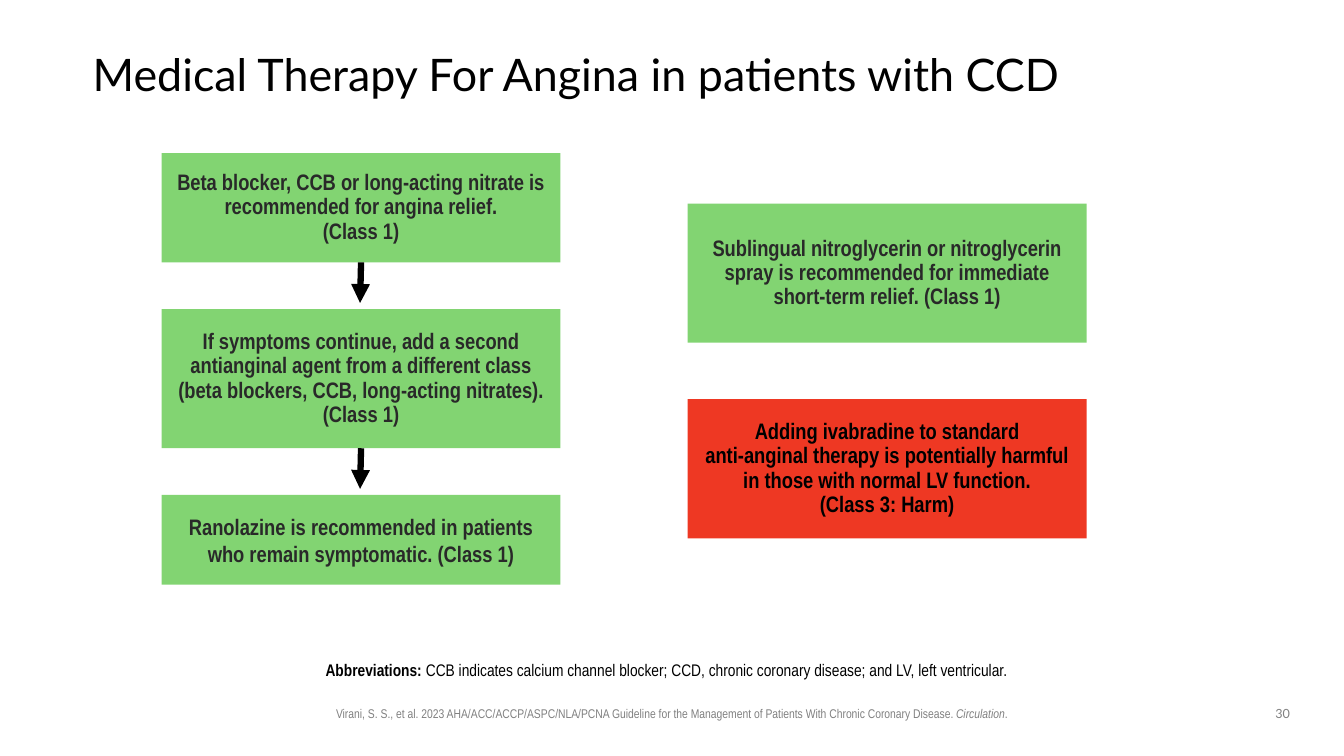
from lxml import etree
from pptx import Presentation
from pptx.dml.color import RGBColor
from pptx.enum.shapes import MSO_CONNECTOR as Connector, MSO_SHAPE as Shape
from pptx.enum.text import MSO_ANCHOR as Anchor, MSO_AUTO_SIZE as AutoSize, PP_ALIGN as Align
from pptx.oxml.ns import qn
from pptx.util import Pt

GREEN = RGBColor(0x82, 0xD4, 0x72)
RED = RGBColor(0xEE, 0x38, 0x23)
CHARCOAL = RGBColor(0x29, 0x29, 0x29)
GRAY = RGBColor(0x80, 0x80, 0x80)
BLACK = RGBColor(0, 0, 0)
NARROW, LATO = "Arial Narrow", "Lato"

TITLE = "Medical Therapy For Angina in patients with CCD"
# text, height, line spacing
STEPS = [
    ("Beta blocker, CCB or long-acting nitrate is recommended for angina relief.\v(Class 1)", 78, 0.9),
    ("If symptoms continue, add a second antianginal agent from a different class "
     "(beta blockers, CCB, long-acting nitrates). (Class 1)", 99.4, 0.9),
    ("Ranolazine is recommended in patients who remain symptomatic. (Class 1)", 64, 1.0),
]
# text, fill, font colour
ADVICE = [
    ("Sublingual nitroglycerin or nitroglycerin spray is recommended for immediate\v"
     "short-term relief. (Class 1)", GREEN, CHARCOAL),
    ("Adding ivabradine to standard\vanti-anginal therapy is potentially harmful "
     "in those with normal LV function.\v(Class 3: Harm)", RED, BLACK),
]
# text, bold, italic
ABBREVIATIONS = [
    ("Abbreviations: ", True, False),
    ("CCB indicates calcium channel blocker; CCD, chronic coronary disease; "
     "and LV, left ventricular.", False, False),
]
CITATION = [
    ("Virani, S. S., et al. 2023 AHA/ACC/ACCP/ASPC/NLA/PCNA Guideline for the Management "
     "of Patients With Chronic Coronary Disease. ", False, False),
    ("Circulation", False, True),
    (".", False, False),
]
PAGE_NUMBER = [("30", False, False)]

BOX_WIDTH = 285
STEP_LEFT, STEP_TOP, STEP_GAP = 115.4, 109.4, 33.4
ADVICE_LEFT, ADVICE_TOP, ADVICE_HEIGHT, ADVICE_PITCH = 491.2, 145.4, 99.4, 139.7
ARROW_LENGTH = 29


def place(shape, left, top, width, height):
    shape.left, shape.top, shape.width, shape.height = map(Pt, (left, top, width, height))


def style(font, name, size, color, bold=False, italic=False):
    font.name, font.size, font.bold, font.italic = name, Pt(size), bold, italic
    font.color.rgb = color


def add_box(page, text, left, top, height, fill, color, spacing=0.9):
    box = page.shapes.add_shape(Shape.RECTANGLE, Pt(left), Pt(top), Pt(BOX_WIDTH), Pt(height))
    box.shadow.inherit = False
    box.fill.solid()
    box.fill.fore_color.rgb = fill
    box.line.fill.background()
    frame = box.text_frame
    frame.word_wrap = True
    frame.vertical_anchor = Anchor.MIDDLE
    frame.text = text
    para = frame.paragraphs[0]
    para.alignment, para.line_spacing = Align.CENTER, spacing
    for span in para.runs:
        style(span.font, NARROW, 16, color, bold=True)
    return box


def add_arrow_below(page, box):
    middle, bottom = box.left + box.width // 2, box.top + box.height
    arrow = page.shapes.add_connector(Connector.STRAIGHT, middle, bottom,
                                      middle - Pt(0.7), bottom + Pt(ARROW_LENGTH))
    arrow.begin_connect(box, 2)
    arrow.line.color.rgb = BLACK
    arrow.line.width = Pt(4.5)
    etree.SubElement(arrow.line._get_or_add_ln(), qn("a:tailEnd"), type="triangle")
    etree.SubElement(arrow._element.spPr, qn("a:effectLst"))


def write_spans(frame, spans, name, size, color):
    frame.word_wrap = True
    para = frame.paragraphs[0]
    para.alignment = Align.CENTER
    for text, bold, italic in spans:
        span = para.add_run()
        span.text = text
        style(span.font, name, size, color, bold, italic)
    return para


def add_footer(page, spans, name, left, width):
    footer = page.shapes.add_textbox(Pt(left), Pt(500.4), Pt(width), Pt(18.2))
    write_spans(footer.text_frame, spans, name, 9, GRAY)


def set_title(title):
    place(title, 66.2, 28.8, 828, 51.8)
    frame = title.text_frame
    frame.text = TITLE
    frame.auto_size, frame.vertical_anchor = AutoSize.NONE, Anchor.MIDDLE
    frame.margin_left = frame.margin_right = frame.margin_top = frame.margin_bottom = 0
    para = frame.paragraphs[0]
    para.alignment, para.line_spacing = Align.LEFT, 0.9
    style(para.runs[0].font, LATO, 32, BLACK)


def set_abbreviations(body):
    place(body, 170.6, 469.4, 618.5, 16.6)
    frame = body.text_frame
    frame.auto_size, frame.vertical_anchor = AutoSize.NONE, Anchor.TOP
    frame.margin_left = 0
    para = write_spans(frame, ABBREVIATIONS, NARROW, 12, BLACK)
    para.line_spacing, para.space_before = 0.9, Pt(0)
    properties = para._p.get_or_add_pPr()
    properties.set("marL", "0")
    properties.set("indent", "0")
    etree.SubElement(properties, qn("a:buNone"))


def main():
    deck = Presentation()
    deck.slide_width, deck.slide_height = Pt(960), Pt(540)
    page = deck.slides.add_slide(deck.slide_layouts[1])
    set_title(page.shapes.title)
    set_abbreviations(page.placeholders[1])

    top = STEP_TOP
    for index, (text, height, spacing) in enumerate(STEPS):
        box = add_box(page, text, STEP_LEFT, top, height, GREEN, CHARCOAL, spacing)
        if index < len(STEPS) - 1:
            add_arrow_below(page, box)
        top += height + STEP_GAP

    for index, (text, fill, color) in enumerate(ADVICE):
        add_box(page, text, ADVICE_LEFT, ADVICE_TOP + index * ADVICE_PITCH,
                ADVICE_HEIGHT, fill, color)

    add_footer(page, CITATION, NARROW, 211.7, 536.4)
    add_footer(page, PAGE_NUMBER, LATO, 894.2, 44)
    deck.save("out.pptx")


if __name__ == "__main__":
    main()
